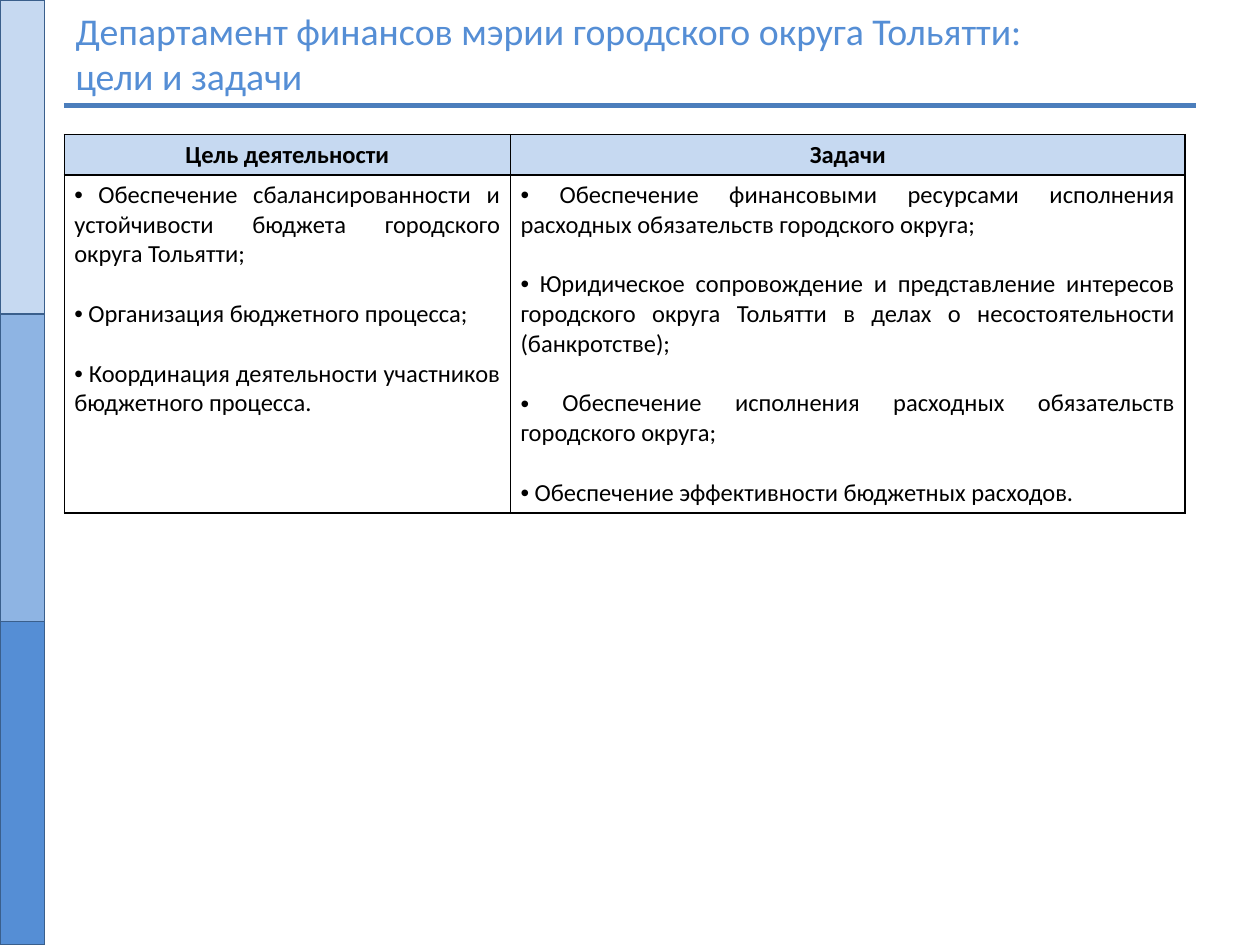
"""Build the slide on the goals and tasks of the city finance department."""
from lxml.etree import SubElement
from pptx import Presentation
from pptx.dml.color import RGBColor
from pptx.enum.shapes import MSO_CONNECTOR, MSO_SHAPE
from pptx.enum.text import MSO_ANCHOR, MSO_AUTO_SIZE, PP_ALIGN
from pptx.oxml import parse_xml
from pptx.oxml.ns import nsdecls, qn
from pptx.util import Pt

HUES = {"pale": "C6D9F1", "mid": "8EB4E3", "deep": "558ED5",
        "edge": "3A5F8C", "rule": "4B7EBC", "ink": "000000"}
FONT = "Calibri"
TITLE = ["Департамент финансов мэрии городского округа Тольятти:", "цели и задачи"]
COLS = [
    ("Цель деятельности", 255, [
        "Обеспечение сбалансированности и устойчивости бюджета городского округа Тольятти;",
        "Организация бюджетного процесса;",
        "Координация деятельности участников бюджетного процесса."]),
    ("Задачи", 385.5, [
        "Обеспечение финансовыми ресурсами исполнения расходных обязательств городского округа;",
        "Юридическое сопровождение и представление интересов городского округа Тольятти "
        "в делах о несостоятельности (банкротстве);",
        "Обеспечение исполнения расходных обязательств городского округа;",
        "Обеспечение эффективности бюджетных расходов."]),
]


def hue(name):
    return RGBColor.from_string(HUES[name])


def write(para, text, size, name, bold=False):
    run = para.add_run()
    run.text = text
    run.font.name = FONT
    run.font.size = Pt(size)
    run.font.bold = bold
    run.font.color.rgb = hue(name)


deck = Presentation()
deck.slide_width, deck.slide_height = Pt(720), Pt(540)
slide = deck.slides.add_slide(deck.slide_layouts[5])
shapes = slide.shapes

for name, top, high in [("pale", 0, 179.5), ("mid", 179.5, 179.5), ("deep", 355, 185)]:
    bar = shapes.add_shape(MSO_SHAPE.RECTANGLE, 0, Pt(top), Pt(25.5), Pt(high))
    bar.shadow.inherit = False
    bar.fill.solid()
    bar.fill.fore_color.rgb = hue(name)
    bar.line.color.rgb = hue("edge")
    bar.line.width = Pt(0)

rule = shapes.add_connector(MSO_CONNECTOR.STRAIGHT, Pt(36.5), Pt(60.25), Pt(683.5), Pt(60.25))
rule.line.color.rgb = hue("rule")
rule.line.width = Pt(3)
SubElement(rule._element.spPr, qn("a:effectLst"))

title = shapes.title
title.left, title.top, title.width, title.height = Pt(36), Pt(0), Pt(648), Pt(60.5)
frame = title.text_frame
frame.word_wrap = True
frame.auto_size = MSO_AUTO_SIZE.NONE
frame.vertical_anchor = MSO_ANCHOR.MIDDLE
para = frame.paragraphs[0]
para.alignment = PP_ALIGN.LEFT
write(para, TITLE[0], 21.6, "deep")
para.add_line_break()
write(para, TITLE[1], 21.6, "deep")

wide = sum(col[1] for col in COLS)
table = shapes.add_table(2, len(COLS), Pt(36.75), Pt(77), Pt(wide), Pt(216)).table
table.first_row = table.horz_banding = False
table.rows[0].height, table.rows[1].height = Pt(23), Pt(193)

for num, (head, width, items) in enumerate(COLS):
    table.columns[num].width = Pt(width)
    top, body = table.cell(0, num), table.cell(1, num)
    for cell in (top, body):
        cell.margin_left = cell.margin_right = Pt(5.75)
        cell.margin_top = cell.margin_bottom = Pt(2.9)
        props = cell._tc.get_or_add_tcPr()
        for side in ("lnL", "lnR", "lnT", "lnB"):
            props.append(parse_xml(
                f'<a:{side} {nsdecls("a")} w="{Pt(1)}"><a:solidFill>'
                f'<a:srgbClr val="{HUES["ink"]}"/></a:solidFill></a:{side}>'))
    top.fill.solid()
    top.fill.fore_color.rgb = hue("pale")
    body.fill.background()
    para = top.text_frame.paragraphs[0]
    para.alignment = PP_ALIGN.CENTER
    write(para, head, 14, "ink", True)
    frame = body.text_frame
    for row, item in enumerate(items):
        para = frame.add_paragraph() if row else frame.paragraphs[0]
        para.alignment = PP_ALIGN.JUSTIFY
        para.space_before = Pt(17 if row else 0)
        props = para._p.get_or_add_pPr()
        SubElement(props, qn("a:buFont")).set("typeface", "Arial")
        SubElement(props, qn("a:buChar")).set("char", "•")
        write(para, " " + item, 14, "ink")

deck.save("out.pptx")
